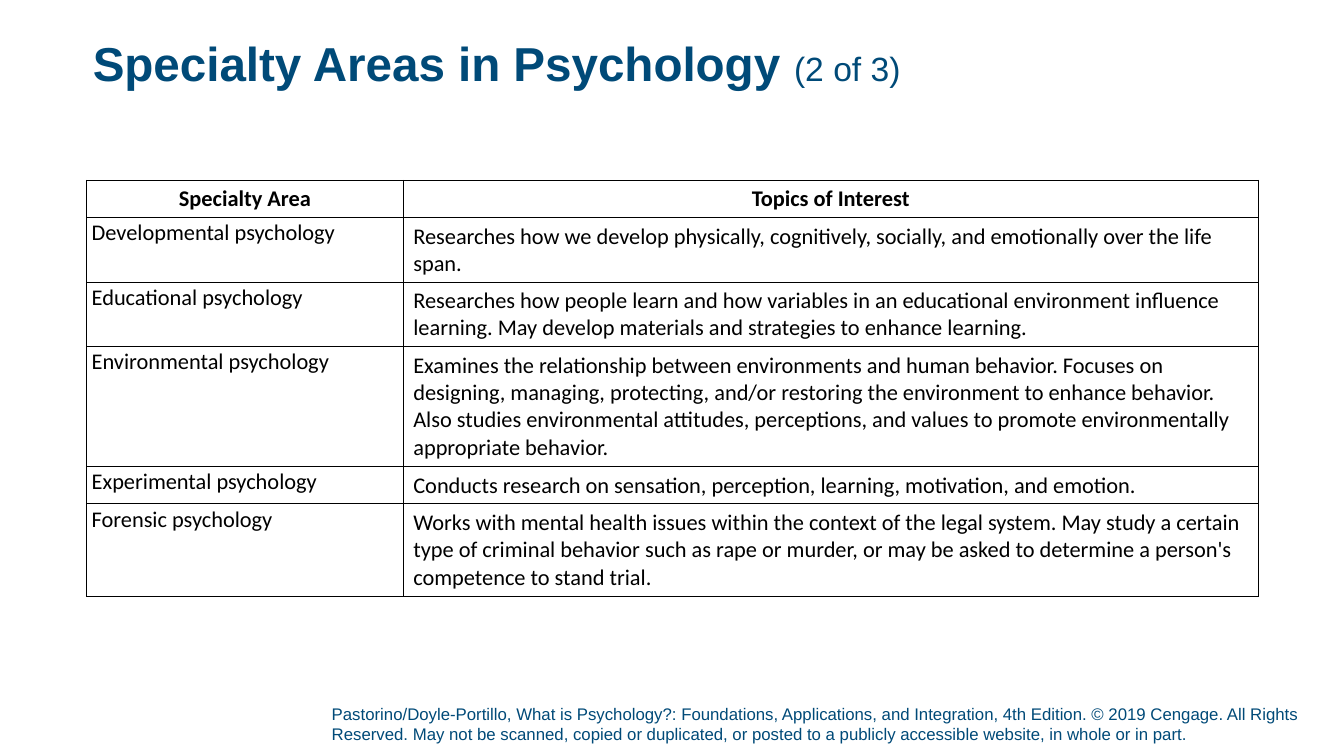
from dataclasses import dataclass

from lxml import etree
from pptx import Presentation
from pptx import util as u
from pptx.dml.color import RGBColor
from pptx.enum import text
from pptx.oxml import ns


@dataclass(frozen=True)
class Theme:
    heading_font: str = "Arial"
    table_font: str = "Calibri"
    blue: RGBColor = RGBColor(0x00, 0x4A, 0x78)
    black: RGBColor = RGBColor(0x00, 0x00, 0x00)
    white: RGBColor = RGBColor(0xFF, 0xFF, 0xFF)
    title_size: int = 34
    counter_size: int = 24
    table_size: int = 16
    footer_size: int = 12
    border_width: int = 1


HEADERS = ("Specialty Area", "Topics of Interest")
SPECIALTIES = (
    ("Developmental psychology",
     "Researches how we develop physically, cognitively, socially, and "
     "emotionally over the life span."),
    ("Educational psychology",
     "Researches how people learn and how variables in an educational "
     "environment influence learning. May develop materials and strategies "
     "to enhance learning."),
    ("Environmental psychology",
     "Examines the relationship between environments and human behavior. "
     "Focuses on designing, managing, protecting, and/or restoring the "
     "environment to enhance behavior. Also studies environmental attitudes, "
     "perceptions, and values to promote environmentally appropriate behavior."),
    ("Experimental psychology",
     "Conducts research on sensation, perception, learning, motivation, "
     "and emotion."),
    ("Forensic psychology",
     "Works with mental health issues within the context of the legal system. "
     "May study a certain type of criminal behavior such as rape or murder, or "
     "may be asked to determine a person's competence to stand trial."),
)
COLUMN_WIDTHS = (3.14, 8.48)
ROW_HEIGHTS = (0.37, 0.64, 0.64, 1.19, 0.37, 0.92)
COPYRIGHT = (
    "Pastorino/Doyle-Portillo, What is Psychology?: Foundations, Applications, "
    "and Integration, 4th Edition. © 2019 Cengage. All Rights Reserved. May not "
    "be scanned, copied or duplicated, or posted to a publicly accessible "
    "website, in whole or in part."
)


class SlideBuilder:
    def __init__(self, slide, theme):
        self.slide = slide
        self.theme = theme

    def set_font(self, font, name, size, color, bold=False):
        font.name = name
        font.size = u.Pt(size)
        font.color.rgb = color
        font.bold = bold

    def set_margins(self, box, left=0, top=0, right=0, bottom=0):
        box.margin_left, box.margin_top = u.Inches(left), u.Inches(top)
        box.margin_right, box.margin_bottom = u.Inches(right), u.Inches(bottom)

    def add_title(self, heading, counter, left, top, width, height):
        theme = self.theme
        title = self.slide.shapes.title
        title.left, title.top = u.Inches(left), u.Inches(top)
        title.width, title.height = u.Inches(width), u.Inches(height)
        frame = title.text_frame
        frame.auto_size = text.MSO_AUTO_SIZE.NONE
        frame.vertical_anchor = text.MSO_ANCHOR.TOP
        self.set_margins(frame)
        paragraph = frame.paragraphs[0]
        paragraph.alignment = text.PP_ALIGN.LEFT
        paragraph.line_spacing = 0.9
        for words, size, bold in ((heading + " ", theme.title_size, True),
                                  (counter, theme.counter_size, False)):
            run = paragraph.add_run()
            run.text = words
            self.set_font(run.font, theme.heading_font, size, theme.blue, bold)

    def add_footer(self, words, left, top, width, height):
        theme = self.theme
        footer = self.slide.shapes.add_textbox(
            u.Inches(left), u.Inches(top), u.Inches(width), u.Inches(height))
        frame = footer.text_frame
        frame.word_wrap = True
        frame.vertical_anchor = text.MSO_ANCHOR.BOTTOM
        self.set_margins(frame, bottom=0.05)
        paragraph = frame.paragraphs[0]
        paragraph.text = words
        self.set_font(paragraph.font, theme.heading_font, theme.footer_size, theme.blue)

    def add_borders(self, cell):
        properties = cell._tc.get_or_add_tcPr()
        for side in ("a:lnL", "a:lnR", "a:lnT", "a:lnB"):
            line = etree.SubElement(properties, ns.qn(side),
                                    w=str(u.Pt(self.theme.border_width)))
            fill = etree.SubElement(line, ns.qn("a:solidFill"))
            etree.SubElement(fill, ns.qn("a:srgbClr"), val=str(self.theme.black))

    def fill_cell(self, cell, words, is_header, is_area):
        theme = self.theme
        self.add_borders(cell)
        cell.fill.solid()
        cell.fill.fore_color.rgb = theme.white
        paragraph = cell.text_frame.paragraphs[0]
        paragraph.text = words
        self.set_font(paragraph.font, theme.table_font, theme.table_size,
                      theme.black, is_header)
        if is_header:
            cell.vertical_anchor = text.MSO_ANCHOR.MIDDLE
            paragraph.alignment = text.PP_ALIGN.CENTER
        elif is_area:
            self.set_margins(cell, left=0.05)
            paragraph.line_spacing = u.Pt(20.9)

    def add_table(self, rows, column_widths, row_heights, left, top):
        table = self.slide.shapes.add_table(
            len(rows), len(column_widths), u.Inches(left), u.Inches(top),
            u.Inches(sum(column_widths)), u.Inches(sum(row_heights))).table
        table.horz_banding = False
        for column, width in zip(table.columns, column_widths):
            column.width = u.Inches(width)
        for row, height in zip(table.rows, row_heights):
            row.height = u.Inches(height)
        for row_index, row in enumerate(rows):
            for column_index, words in enumerate(row):
                self.fill_cell(table.cell(row_index, column_index), words,
                               is_header=row_index == 0, is_area=column_index == 0)


def main():
    presentation = Presentation()
    presentation.slide_width = u.Inches(13.33)
    presentation.slide_height = u.Inches(7.5)
    title_only = presentation.slide_layouts[5]
    builder = SlideBuilder(presentation.slides.add_slide(title_only), Theme())
    builder.add_footer(COPYRIGHT, 3.29, 6.98, 9.79, 0.45)
    builder.add_title("Specialty Areas in Psychology", "(2 of 3)",
                      0.92, 0.4, 11.5, 0.74)
    builder.add_table((HEADERS, *SPECIALTIES), COLUMN_WIDTHS, ROW_HEIGHTS, 0.86, 1.79)
    presentation.save("out.pptx")


if __name__ == "__main__":
    main()
